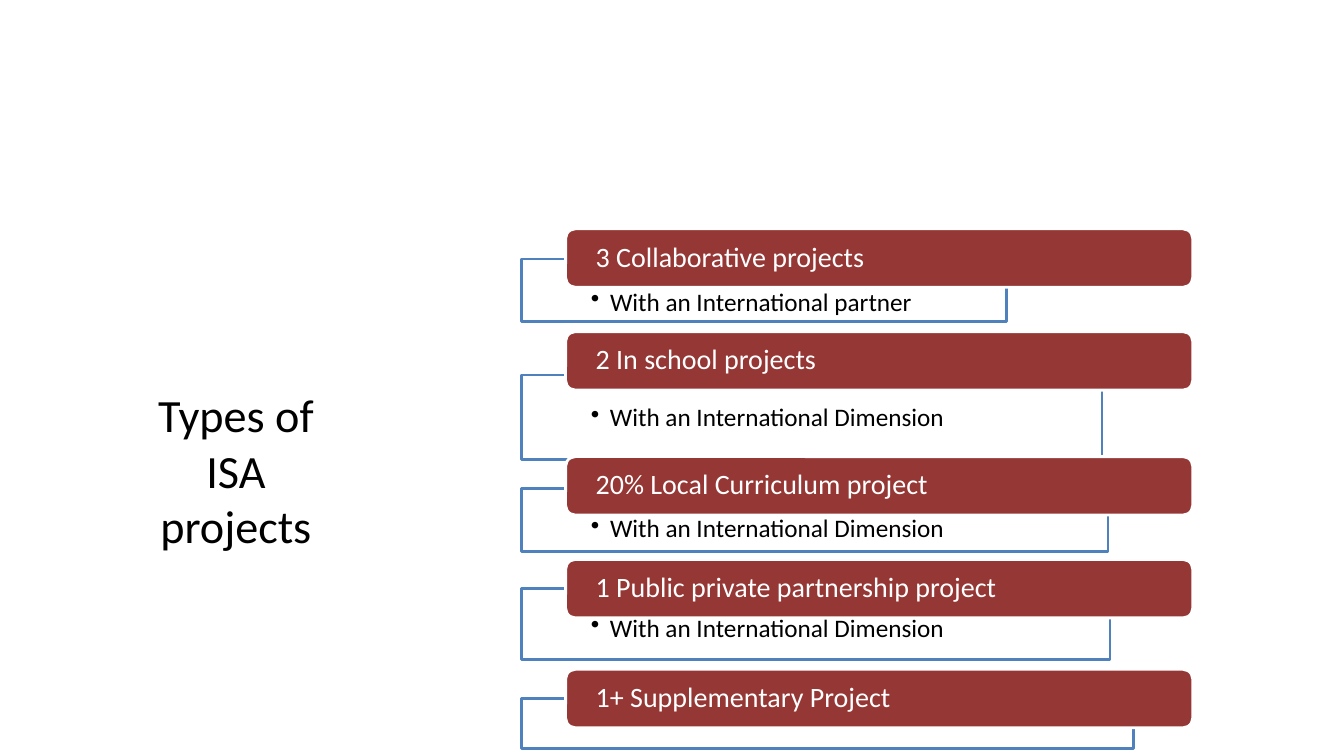
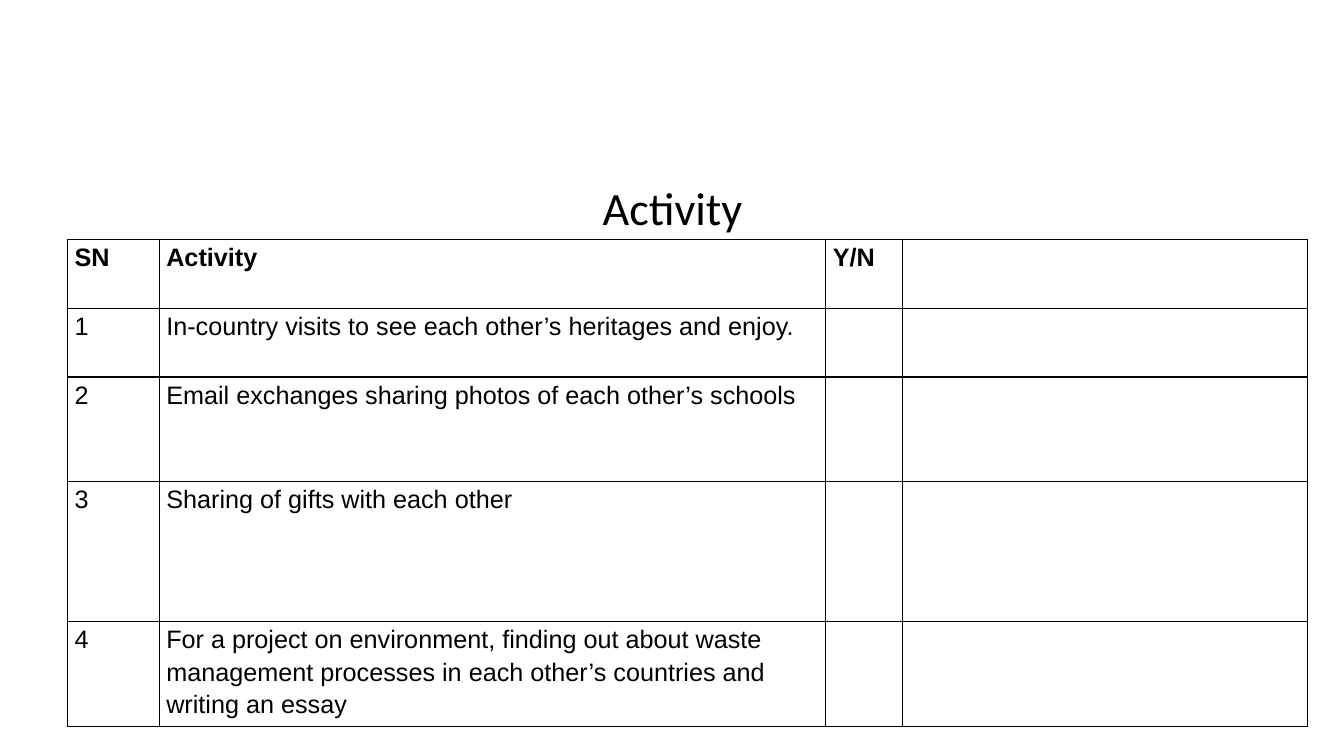
import dataclasses

import lxml.etree
import pptx
import pptx.dml.color
import pptx.enum.shapes
import pptx.enum.text
import pptx.oxml.ns
import pptx.slide
import pptx.table
import pptx.util

Inches = pptx.util.Inches
Points = pptx.util.Pt
qualified = pptx.oxml.ns.qn

BLACK, WHITE, BLUE, RED = "000000", "FFFFFF", "4F81BD", "953735"
HEADING_FONT, TABLE_FONT = "Calibri", "Arial"
TITLE_ONLY_LAYOUT = 5

PANEL_LEFT = 5.17
BAR_LEFT, BAR_WIDTH, BAR_HEIGHT = 5.61, 6.22, 0.58


@dataclasses.dataclass
class ProjectType:
    heading: str
    detail: str
    bar_top: float
    panel_top: float
    panel_width: float
    panel_height: float
    detail_inset: float


PARTNER = "With an International partner"
DIMENSION = "With an International Dimension"
PROJECT_TYPES = [
    ProjectType("3 Collaborative projects", PARTNER, 2.27, 2.57, 4.81, 0.62, 0.3),
    ProjectType("2 In school projects", DIMENSION, 3.29, 3.72, 5.76, 0.84, 0.3),
    ProjectType("20% Local Curriculum project", DIMENSION, 4.53, 4.85, 5.82, 0.62, 0.27),
    ProjectType("1 Public private partnership project", DIMENSION, 5.55, 5.84, 5.84, 0.7, 0.27),
    ProjectType("1+ Supplementary Project", "", 6.64, 6.93, 6.07, 0.5, 0.27),
]

COLUMN_WIDTHS = [0.91, 6.61, 0.76, 4.02]
ROW_HEIGHTS = [0.68, 0.68, 1.04, 1.39, 1.04]
TABLE_HEADER = ["SN", "Activity", "Y/N", ""]
ACTIVITIES = [
    "In-country visits to see each other’s heritages and enjoy.",
    "Email exchanges sharing photos of each other’s schools",
    "Sharing of gifts with each other",
    "For a project on environment, finding out about waste management "
    "processes in each other’s countries and writing an essay",
]


def color(value: str) -> pptx.dml.color.RGBColor:
    return pptx.dml.color.RGBColor.from_string(value)


def format_runs(paragraph, size: float, value: str, font_name: str, bold: bool = False) -> None:
    for run in paragraph.runs:
        run.font.name = font_name
        run.font.size = Points(size)
        run.font.bold = bold
        run.font.color.rgb = color(value)


def add_titled_slide(presentation, title: str, left: float, top: float,
                     width: float, height: float) -> pptx.slide.Slide:
    slide = presentation.slides.add_slide(presentation.slide_layouts[TITLE_ONLY_LAYOUT])
    shape = slide.shapes.title
    shape.left, shape.top = Inches(left), Inches(top)
    shape.width, shape.height = Inches(width), Inches(height)
    text_frame = shape.text_frame
    text_frame.text = title
    text_frame.word_wrap = True
    text_frame.auto_size = pptx.enum.text.MSO_AUTO_SIZE.NONE
    text_frame.vertical_anchor = pptx.enum.text.MSO_ANCHOR.MIDDLE
    paragraph = text_frame.paragraphs[0]
    paragraph.alignment = pptx.enum.text.PP_ALIGN.CENTER
    format_runs(paragraph, 33, BLACK, HEADING_FONT)
    return slide


def add_box(slide, kind, left: float, top: float, width: float, height: float,
            fill: str, line: str):
    shape = slide.shapes.add_shape(
        kind, Inches(left), Inches(top), Inches(width), Inches(height))
    shape.shadow.inherit = False
    shape.fill.solid()
    shape.fill.fore_color.rgb = color(fill)
    shape.line.color.rgb = color(line)
    shape.line.width = Points(2)
    return shape


def write_box(shape, text: str, size: float, value: str, side_inset: float,
              top_inset: float, bottom_inset: float, anchor, bullet: bool = False) -> None:
    text_frame = shape.text_frame
    text_frame.text = text
    text_frame.word_wrap = True
    text_frame.vertical_anchor = anchor
    text_frame.margin_left = text_frame.margin_right = Inches(side_inset)
    text_frame.margin_top = Inches(top_inset)
    text_frame.margin_bottom = Inches(bottom_inset)
    paragraph = text_frame.paragraphs[0]
    if bullet:
        properties = paragraph._p.get_or_add_pPr()
        properties.set("marL", str(Inches(0.19)))
        properties.set("indent", str(-Inches(0.19)))
        lxml.etree.SubElement(properties, qualified("a:buChar")).set("char", "•")
    paragraph.alignment = pptx.enum.text.PP_ALIGN.LEFT
    paragraph.line_spacing = 0.9
    format_runs(paragraph, size, value, HEADING_FONT)


def add_project_type(slide: pptx.slide.Slide, project: ProjectType) -> None:
    shapes = pptx.enum.shapes.MSO_SHAPE
    anchors = pptx.enum.text.MSO_ANCHOR
    # Outlined panel with the detail
    panel = add_box(slide, shapes.RECTANGLE, PANEL_LEFT, project.panel_top,
                    project.panel_width, project.panel_height, WHITE, BLUE)
    fill_color = panel._element.spPr.find(qualified("a:solidFill"))[0]
    lxml.etree.SubElement(fill_color, qualified("a:alpha")).set("val", "90000")
    if project.detail:
        write_box(panel, project.detail, 18, BLACK, 0.69, project.detail_inset, 0.14,
                  anchors.TOP, bullet=True)
    # Heading bar over the panel's top edge
    bar = add_box(slide, shapes.ROUNDED_RECTANGLE, BAR_LEFT, project.bar_top,
                  BAR_WIDTH, BAR_HEIGHT, RED, WHITE)
    write_box(bar, project.heading, 20, WHITE, 0.27, 0, 0, anchors.MIDDLE)


def set_borders(cell: pptx.table._Cell) -> None:
    properties = cell._tc.get_or_add_tcPr()
    for side in ("lnL", "lnR", "lnT", "lnB"):
        border = lxml.etree.SubElement(properties, qualified(f"a:{side}"))
        border.set("w", str(Points(1)))
        fill = lxml.etree.SubElement(border, qualified("a:solidFill"))
        lxml.etree.SubElement(fill, qualified("a:srgbClr")).set("val", BLACK)


def write_cell(cell: pptx.table._Cell, text: str, bold: bool) -> None:
    set_borders(cell)
    cell.fill.background()
    cell.margin_left = cell.margin_right = Inches(0.07)
    cell.margin_top = cell.margin_bottom = 0
    cell.text_frame.text = text
    paragraph = cell.text_frame.paragraphs[0]
    paragraph.line_spacing = 1.15
    format_runs(paragraph, 18, BLACK, TABLE_FONT, bold)


def add_activity_table(slide: pptx.slide.Slide) -> None:
    rows = [TABLE_HEADER]
    rows += [[str(number), activity, "", ""] for number, activity in enumerate(ACTIVITIES, 1)]
    table = slide.shapes.add_table(
        len(rows), len(COLUMN_WIDTHS), Inches(0.67), Inches(2.38),
        Inches(sum(COLUMN_WIDTHS)), Inches(sum(ROW_HEIGHTS))).table
    table.first_row = table.horz_banding = False
    for column, width in zip(table.columns, COLUMN_WIDTHS):
        column.width = Inches(width)
    for row_index, (texts, height) in enumerate(zip(rows, ROW_HEIGHTS)):
        table.rows[row_index].height = Inches(height)
        for column_index, text in enumerate(texts):
            write_cell(table.cell(row_index, column_index), text, bold=row_index == 0)


def main() -> None:
    presentation = pptx.Presentation()
    presentation.slide_width, presentation.slide_height = Inches(13.33), Inches(7.5)

    # Project types
    slide = add_titled_slide(presentation, "Types of ISA projects", 1.23, 3.75, 2.22, 1.82)
    for project in PROJECT_TYPES:
        add_project_type(slide, project)

    # Activity checklist
    slide = add_titled_slide(presentation, "Activity", 0.67, 1.75, 12, 0.61)
    add_activity_table(slide)

    presentation.save("out.pptx")


if __name__ == "__main__":
    main()
